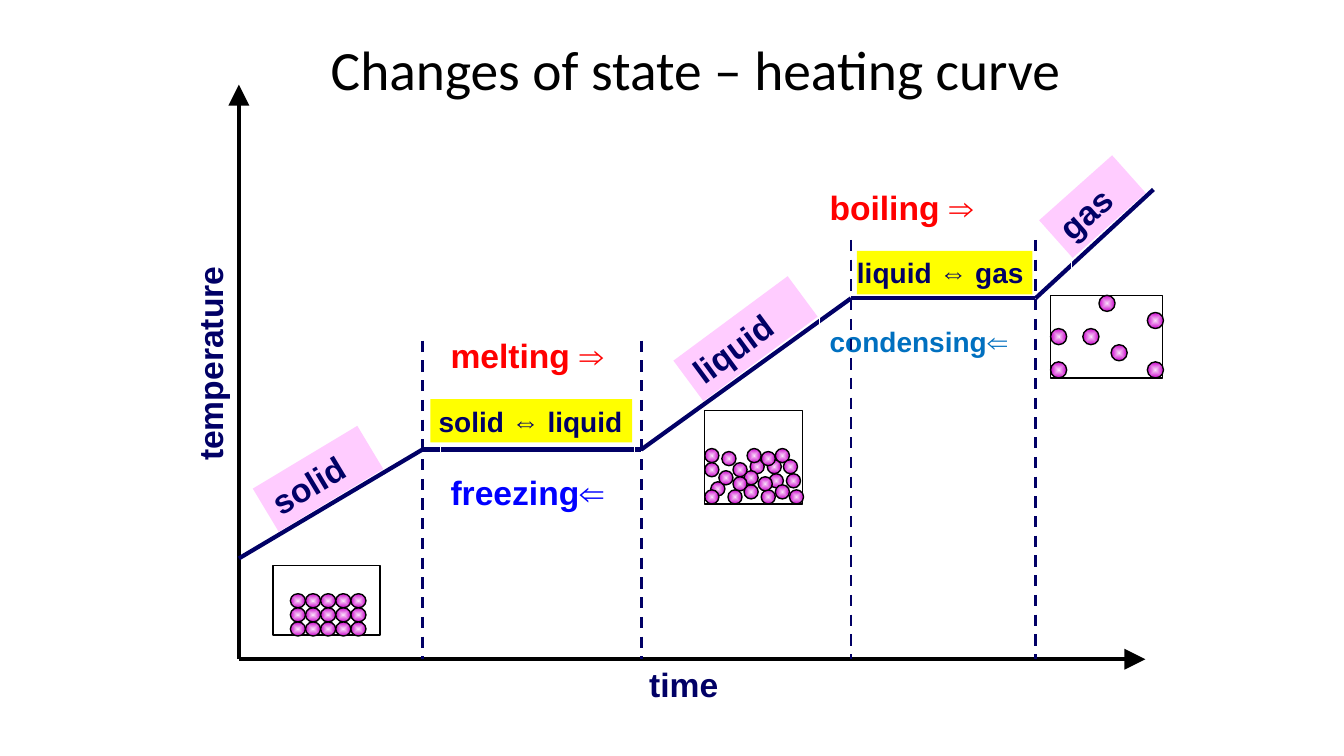
"""Build the heating curve slide."""
import dataclasses
import itertools
import typing

import lxml.etree
import pptx
import pptx.dml.color
import pptx.enum.dml
import pptx.enum.shapes
import pptx.enum.text
import pptx.oxml.ns
import pptx.util

Inches = pptx.util.Inches
Pt = pptx.util.Pt
qn = pptx.oxml.ns.qn
Point = tuple[float, float]
Box = tuple[float, float, float, float]

@dataclasses.dataclass(frozen=True)
class Theme:
    black: str = "000000"
    white: str = "FFFFFF"
    navy: str = "010066"
    heating: str = "FF0000"
    freezing: str = "0000FF"
    condensing: str = "0070C0"
    state: str = "FFCCFF"
    equilibrium: str = "FFFF00"
    particle: tuple[str, str] = ("F8DCF8", "CC00CC")
    title_font: str = "Calibri"
    label_font: str = "Arial"
    title_size: float = 39.6
    label_size: float = 24
    small_size: float = 20
    change_gap: float = 69

THEME = Theme()

@dataclasses.dataclass(frozen=True)
class Wording:
    text: str
    color: str = THEME.navy
    size: float = THEME.label_size
    gap: float = 0

@dataclasses.dataclass(frozen=True)
class Label:
    box: Box
    wording: tuple[Wording, ...]
    fill: str | None = None
    outline: str | None = None
    rotation: float = 0
    inset: Point = (0.1, 0.1)

@dataclasses.dataclass(frozen=True)
class Container:
    box: Box
    particle: Point
    places: tuple[Point, ...]

@dataclasses.dataclass(frozen=True)
class Stroke:
    start: Point
    end: Point
    color: str = THEME.navy
    width: float = 3
    dashed: bool = False
    arrow: bool = False

ORIGIN = (2.37, 6.54)
CURVE = ((2.37, 5.54), (4.19, 4.46), (6.36, 4.46), (8.44, 2.96), (10.27, 2.96), (11.44, 1.88))
BOUNDARY_TOPS = (3.38, 3.38, 2.38, 2.38)
AXES = [Stroke(ORIGIN, tip, THEME.black, arrow=True) for tip in ((2.37, 0.84), (11.36, 6.54))]
HEATING = [Stroke(start, end) for start, end in itertools.pairwise(CURVE)]
BOUNDARIES = [Stroke((x, top), (x, ORIGIN[1]), width=2, dashed=True)
              for (x, _), top in zip(CURVE[1:5], BOUNDARY_TOPS)]
CHANGES = [
    Label((4.37, 3.27, 1.92, 1.91),
          (Wording("melting ⇒", THEME.heating),
           Wording("freezing⇐", THEME.freezing, gap=THEME.change_gap)), outline=THEME.white),
    Label((4.27, 3.96, 2, 0.43), (Wording("solid ⇔ liquid", size=THEME.small_size),),
          THEME.equilibrium, inset=(0.08, 0)),
    Label((8.13, 1.81, 2.5, 1.84),
          (Wording("boiling ⇒", THEME.heating),
           Wording("condensing⇐", THEME.condensing, THEME.small_size, THEME.change_gap)), outline=THEME.white),
    Label((8.5, 2.49, 1.74, 0.43), (Wording("liquid ⇔ gas", size=THEME.small_size),),
          THEME.equilibrium, inset=(0, 0)),
]
AXIS_LABELS = [
    Label((0.62, 2.96, 2.92, 0.5), (Wording("temperature"),), rotation=270),
    Label((6.34, 6.54, 1.03, 0.5), (Wording("time"),)),
]
STATES = [
    Label((2.55, 4.5, 1.21, 0.5), (Wording("solid"),), THEME.state, rotation=329),
    Label((6.69, 3.11, 1.41, 0.5), (Wording("liquid"),), THEME.state, rotation=323.5),
    Label((10.35, 1.8, 0.97, 0.5), (Wording("gas"),), THEME.state, rotation=318.3),
]
CONTAINERS = [
    Container((2.71, 5.61, 1.06, 0.69), (0.15, 0.14),
              tuple((2.88 + 0.15 * column, 5.89 + 0.14 * row) for row in range(3) for column in range(5))),
    Container((6.99, 4.07, 0.97, 0.93), (0.14, 0.14), (
        (7.61, 4.56), (7.44, 4.56), (7.16, 4.48), (7.38, 4.81), (7.41, 4.45), (6.99, 4.45),
        (7.69, 4.45), (7.38, 4.67), (7.27, 4.59), (6.99, 4.59), (7.27, 4.73), (7.63, 4.7),
        (7.55, 4.86), (7.22, 4.86), (7.05, 4.78), (6.99, 4.86), (7.69, 4.81), (7.83, 4.86),
        (7.8, 4.7), (7.77, 4.56), (7.13, 4.67), (7.55, 4.48), (7.52, 4.73))),
    Container((10.42, 2.93, 1.11, 0.82), (0.16, 0.16), (
        (10.9, 2.93), (10.74, 3.26), (10.42, 3.26), (10.42, 3.59), (11.38, 3.59), (11.38, 3.1), (11.02, 3.42))),
]

def apply(target: typing.Any, values: dict[str, typing.Any]) -> None:
    for name, value in values.items():
        setattr(target, name, value)

def rgb(color: str) -> pptx.dml.color.RGBColor:
    return pptx.dml.color.RGBColor.from_string(color)

def paint(shape: typing.Any, fill: str | None, outline: str | None, width: float) -> None:
    shape.shadow.inherit = False
    if fill:
        shape.fill.solid()
        shape.fill.fore_color.rgb = rgb(fill)
    else:
        shape.fill.background()
    if outline:
        shape.line.color.rgb = rgb(outline)
        shape.line.width = Pt(width)
    else:
        shape.line.fill.background()

def draw_stroke(slide: typing.Any, stroke: Stroke) -> None:
    connector = slide.shapes.add_connector(
        pptx.enum.shapes.MSO_CONNECTOR.STRAIGHT, *map(Inches, stroke.start + stroke.end))
    connector.line.color.rgb = rgb(stroke.color)
    connector.line.width = Pt(stroke.width)
    if stroke.dashed:
        connector.line.dash_style = pptx.enum.dml.MSO_LINE.DASH
    properties = connector._element.spPr
    if stroke.arrow:
        lxml.etree.SubElement(properties.find(qn("a:ln")), qn("a:tailEnd"), type="triangle", w="lg", len="lg")
    lxml.etree.SubElement(properties, qn("a:effectLst"))

def draw_label(slide: typing.Any, label: Label) -> None:
    place = tuple(map(Inches, label.box))
    if label.fill or label.outline:
        block = slide.shapes.add_shape(pptx.enum.shapes.MSO_SHAPE.RECTANGLE, *place)
        paint(block, label.fill, label.outline, 0.75)
    else:
        block = slide.shapes.add_textbox(*place)
    block.rotation = label.rotation
    left, right = map(Inches, label.inset)
    apply(block.text_frame, {"word_wrap": True, "vertical_anchor": pptx.enum.text.MSO_ANCHOR.TOP,
                             "margin_left": left, "margin_right": right,
                             "margin_top": Inches(0.05), "margin_bottom": Inches(0.05)})
    for index, wording in enumerate(label.wording):
        paragraph = block.text_frame.add_paragraph() if index else block.text_frame.paragraphs[0]
        apply(paragraph, {"alignment": pptx.enum.text.PP_ALIGN.LEFT, "space_before": Pt(wording.gap)})
        run = paragraph.add_run()
        run.text = wording.text
        apply(run.font, {"name": THEME.label_font, "size": Pt(wording.size), "bold": True})
        run.font.color.rgb = rgb(wording.color)

def draw_container(slide: typing.Any, container: Container) -> None:
    frame = slide.shapes.add_shape(pptx.enum.shapes.MSO_SHAPE.RECTANGLE, *map(Inches, container.box))
    paint(frame, THEME.white, THEME.black, 1)
    for place in container.places:
        particle = slide.shapes.add_shape(
            pptx.enum.shapes.MSO_SHAPE.OVAL, *map(Inches, place + container.particle))
        paint(particle, None, THEME.black, 1)
        particle.fill.gradient()
        for stop, color in zip(particle.fill.gradient_stops, THEME.particle):
            stop.color.rgb = rgb(color)
        gradient = particle._element.spPr.find(qn("a:gradFill"))
        gradient.remove(gradient.find(qn("a:lin")))
        shading = lxml.etree.SubElement(gradient, qn("a:path"), {"path": "shape"})
        lxml.etree.SubElement(shading, qn("a:fillToRect"), dict.fromkeys("ltrb", "50000"))

def write_title(title: typing.Any) -> None:
    apply(title, {"left": Inches(2.43), "top": Inches(0.44), "width": Inches(8.54), "height": Inches(0.55)})
    title.text_frame.text = "Changes of state – heating curve"
    apply(title.text_frame, {"word_wrap": True, "auto_size": pptx.enum.text.MSO_AUTO_SIZE.NONE,
                             "vertical_anchor": pptx.enum.text.MSO_ANCHOR.MIDDLE, "margin_left": Inches(0.85)})
    heading = title.text_frame.paragraphs[0]
    apply(heading, {"alignment": pptx.enum.text.PP_ALIGN.LEFT, "line_spacing": 0.9})
    apply(heading.runs[0].font, {"name": THEME.title_font, "size": Pt(THEME.title_size)})
    heading.runs[0].font.color.rgb = rgb(THEME.black)

def main() -> None:
    deck = pptx.Presentation()
    apply(deck, {"slide_width": Inches(13.33), "slide_height": Inches(7.5)})
    slide = deck.slides.add_slide(deck.slide_layouts[5])
    write_title(slide.shapes.title)
    for stroke in AXES + HEATING:
        draw_stroke(slide, stroke)
    for label in CHANGES + AXIS_LABELS:
        draw_label(slide, label)
    for boundary in BOUNDARIES:
        draw_stroke(slide, boundary)
    for state, container in zip(STATES, CONTAINERS):
        draw_label(slide, state)
        draw_container(slide, container)
    deck.save("out.pptx")

if __name__ == "__main__":
    main()
